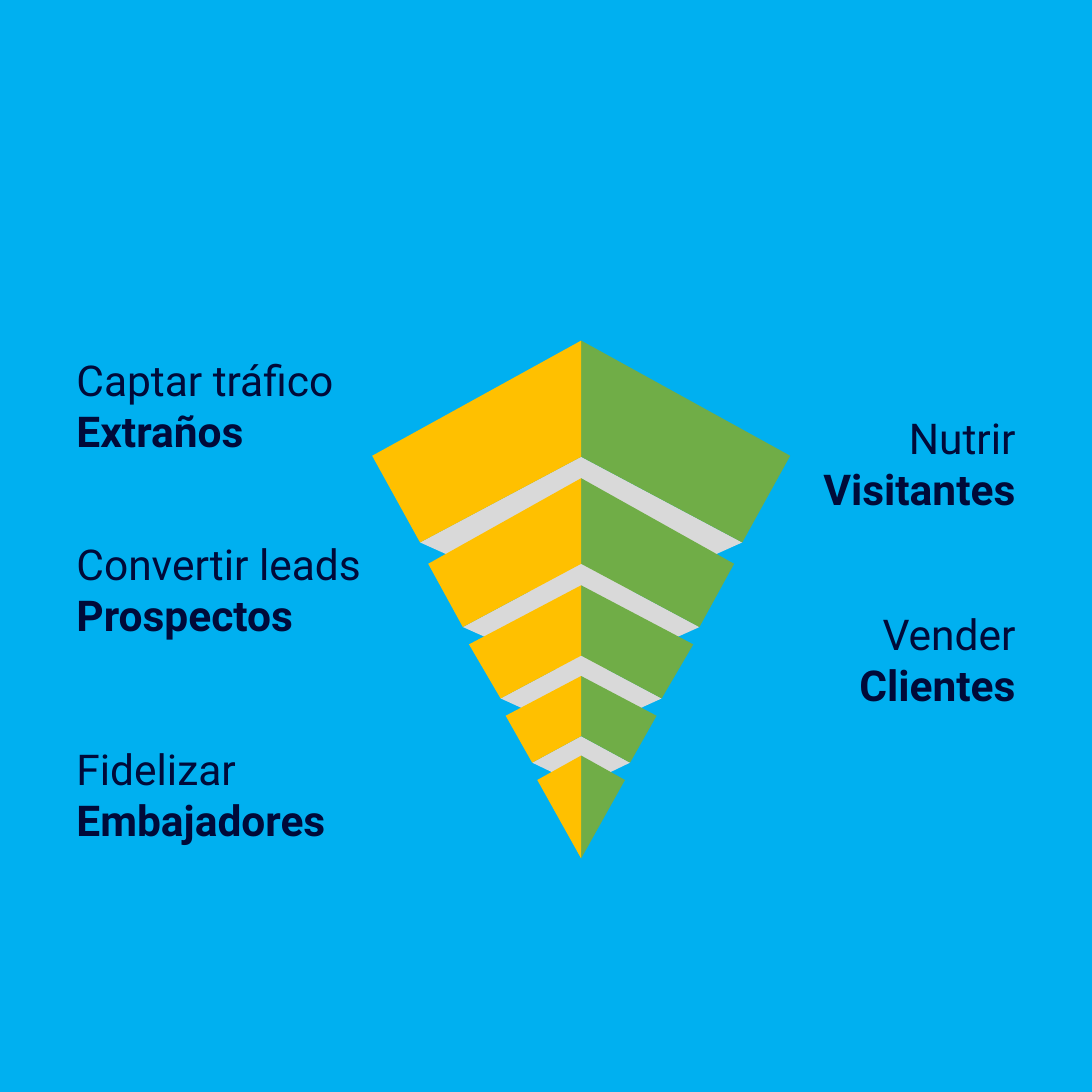
"""Build the inbound marketing funnel slide."""
import pptx
import pptx.dml.color
import pptx.enum.text
import pptx.util
from pptx.util import Inches

SIDE = 10.71
CENTER = 5.7
BACKGROUND, INK = "00B0F0", "000A39"
LEFT_FACE, RIGHT_FACE, UNDERSIDE = "FFC000", "70AD47", "D9D9D9"

LEFT_STAGES = [
    ("Captar tráfico", "Extraños", 3.39),
    ("Convertir leads", "Prospectos", 5.19),
    ("Fidelizar", "Embajadores", 7.2),
]
RIGHT_STAGES = [
    ("Nutrir", "Visitantes", 3.96),
    ("Vender", "Clientes", 5.88),
]
STAGE_HEIGHT = 1.17
LEFT_EDGE, LEFT_WIDTH = 0.75, 3.05
RIGHT_EDGE, RIGHT_WIDTH = 9.96, 2.59

# Each point is (distance from the center line, height on the slide).
TIERS = [
    {"peak": 3.34, "shoulder": (2.05, 4.47), "corner": (1.58, 5.32), "notch": 4.48},
    {"peak": 4.69, "shoulder": (1.5, 5.53), "corner": (1.16, 6.15), "notch": 5.53},
    {"peak": 5.74, "shoulder": (1.1, 6.32), "corner": (0.79, 6.85), "notch": 6.43},
    {"peak": 6.63, "shoulder": (0.74, 7.02), "corner": (0.48, 7.48), "notch": 7.22},
    {"peak": 7.41, "shoulder": (0.43, 7.65), "corner": (0, 8.42), "notch": 8.42},
]
UNDERSIDE_TIPS = [6.03, 6.67, 7.21, 7.71]


def paint(fill, color):
    fill.solid()
    fill.fore_color.rgb = pptx.dml.color.RGBColor.from_string(color)


def add_face(funnel, points, color):
    corners = [(Inches(CENTER + x), Inches(y)) for x, y in dict.fromkeys(points)]
    outline = funnel.shapes.build_freeform(*corners[0])
    outline.add_line_segments(corners[1:], close=True)
    face = outline.convert_to_shape()
    paint(face.fill, color)
    face.line.fill.background()
    face.shadow.inherit = False


def write(paragraph, text, size=30, bold=False, color=INK, align="LEFT"):
    paragraph.alignment = getattr(pptx.enum.text.PP_ALIGN, align)
    run = paragraph.add_run()
    run.text = text
    run.font.name = "Roboto"
    run.font.size = pptx.util.Pt(size)
    run.font.bold = bold
    paint(run.font.fill, color)


def add_stage(slide, action, audience, left, top, width, align):
    stage = slide.shapes.add_textbox(
        Inches(left), Inches(top), Inches(width), Inches(STAGE_HEIGHT)
    )
    frame = stage.text_frame
    frame.word_wrap = True
    frame.vertical_anchor = pptx.enum.text.MSO_ANCHOR.MIDDLE
    frame.margin_left = frame.margin_right = 0
    frame.margin_top = frame.margin_bottom = 0
    write(frame.paragraphs[0], action, align=align)
    write(frame.add_paragraph(), audience, bold=True, align=align)


def main():
    deck = pptx.Presentation()
    deck.slide_width = deck.slide_height = Inches(SIDE)
    slide = deck.slides.add_slide(deck.slide_layouts[6])
    paint(slide.background.fill, BACKGROUND)

    for action, audience, top in LEFT_STAGES:
        add_stage(slide, action, audience, LEFT_EDGE, top, LEFT_WIDTH, "LEFT")
    for action, audience, top in RIGHT_STAGES:
        left = RIGHT_EDGE - RIGHT_WIDTH
        add_stage(slide, action, audience, left, top, RIGHT_WIDTH, "RIGHT")

    funnel = slide.shapes.add_group_shape()
    for tier, tip in zip(TIERS, UNDERSIDE_TIPS):
        reach, height = tier["corner"]
        points = [(0, tier["notch"]), (reach, height), (0, tip), (-reach, height)]
        add_face(funnel, points, UNDERSIDE)
    for tier in TIERS:
        for direction, color in ((1, RIGHT_FACE), (-1, LEFT_FACE)):
            edge = [(direction * x, y) for x, y in (tier["shoulder"], tier["corner"])]
            add_face(funnel, [(0, tier["peak"]), *edge, (0, tier["notch"])], color)

    deck.save("out.pptx")


if __name__ == "__main__":
    main()
